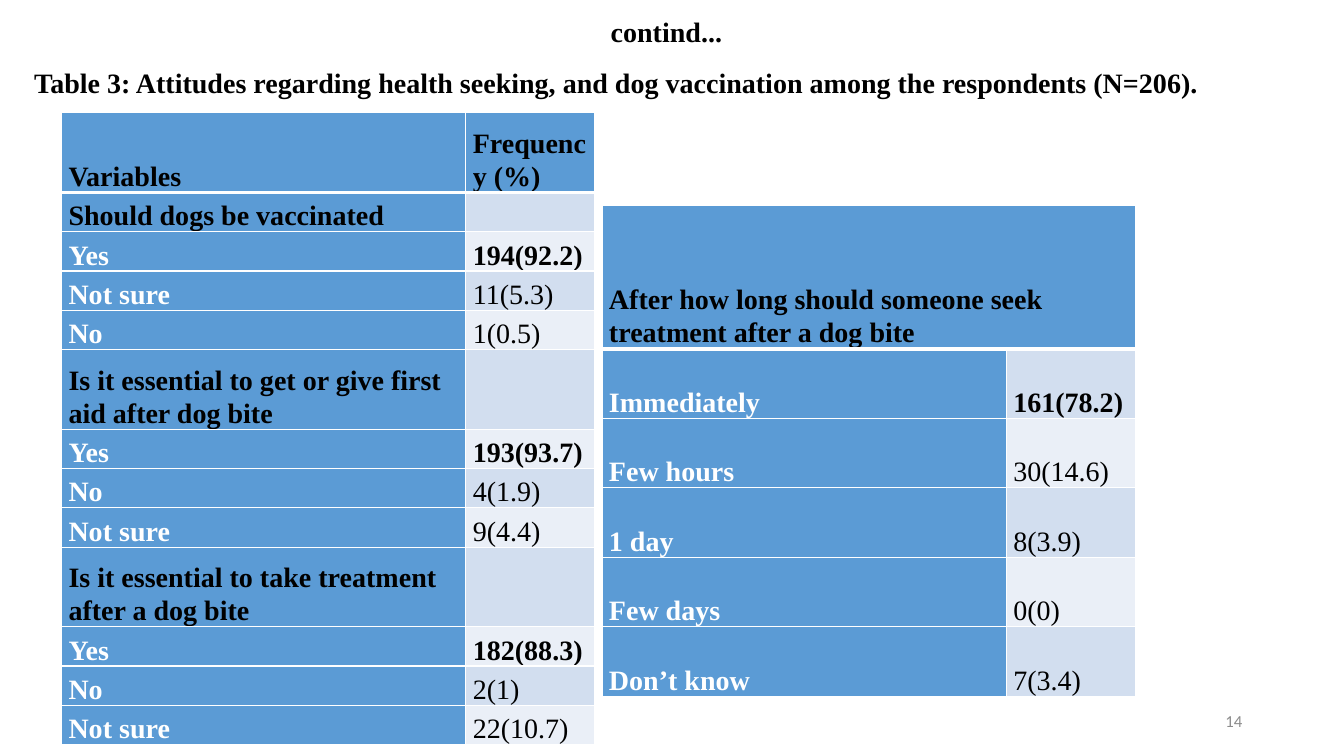
"""Build the slide on attitudes to health seeking and dog vaccination."""
from lxml import etree
from pptx import Presentation
from pptx import util as u
from pptx.dml.color import RGBColor
from pptx.enum import text
from pptx.oxml import ns

ANSWERS = [
    ("Variables", "Frequency (%)"),
    ("Should dogs be vaccinated", ""),
    ("Yes", "194(92.2)"),
    ("Not sure", "11(5.3)"),
    ("No", "1(0.5)"),
    ("Is it essential to get or give first aid after dog bite", ""),
    ("Yes", "193(93.7)"),
    ("No", "4(1.9)"),
    ("Not sure", "9(4.4)"),
    ("Is it essential to take treatment after a dog bite", ""),
    ("Yes", "182(88.3)"),
    ("No", "2(1)"),
    ("Not sure", "22(10.7)"),
]
DELAYS = [
    ("After how long should someone seek treatment after a dog bite", ""),
    ("Immediately", "161(78.2)"),
    ("Few hours", "30(14.6)"),
    ("1 day", "8(3.9)"),
    ("Few days", "0(0)"),
    ("Don’t know", "7(3.4)"),
]


def color(value):
    return RGBColor.from_string(value)


def write(frame, words, font="Times New Roman", size=20, ink="000000",
          bold=True, align=text.PP_ALIGN.LEFT, spacing=1.0):
    para = frame.paragraphs[0]
    para.alignment = align
    para.line_spacing = spacing
    span = para.add_run()
    span.text = words
    span.font.name = font
    span.font.size = u.Pt(size)
    span.font.bold = bold
    span.font.color.rgb = color(ink)


class SlideBuilder:
    """Hold the table style and the current page."""

    accent = "5B9BD5"
    bands = ("EAEFF7", "D2DEEF")
    rule = "FFFFFF"
    columns = (4.01, 1.28)

    def __init__(self, page):
        self.page = page

    def label(self, words, left, top, width, height,
              anchor=text.MSO_ANCHOR.MIDDLE, **style):
        box = self.page.shapes.add_textbox(*map(u.Inches, (left, top, width, height)))
        frame = box.text_frame
        frame.word_wrap = True
        frame.vertical_anchor = anchor
        write(frame, words, **style)

    def borders(self, cell, row):
        properties = cell._tc.get_or_add_tcPr()
        widths = {"lnL": 1, "lnR": 1, "lnT": 3 if row == 1 else 1, "lnB": 3 if row == 0 else 1}
        for side, width in widths.items():
            line = etree.SubElement(properties, ns.qn(f"a:{side}"), w=str(u.Pt(width)))
            fill = etree.SubElement(line, ns.qn("a:solidFill"))
            etree.SubElement(fill, ns.qn("a:srgbClr"), val=self.rule)

    def cell(self, cell, words, row, fill, **style):
        self.borders(cell, row)
        cell.fill.solid()
        cell.fill.fore_color.rgb = color(fill)
        cell.margin_left = cell.margin_right = u.Inches(0.07)
        cell.margin_top = cell.margin_bottom = 0
        cell.vertical_anchor = text.MSO_ANCHOR.BOTTOM
        if words:
            write(cell.text_frame, words, spacing=1.07, **style)

    def table(self, records, left, top, heights):
        frame = self.page.shapes.add_table(
            len(records), 2, u.Inches(left), u.Inches(top),
            u.Inches(sum(self.columns)), u.Inches(sum(heights)))
        table = frame.table
        for column, width in zip(table.columns, self.columns):
            column.width = u.Inches(width)
        after_question = False
        for row, (name, value) in enumerate(records):
            table.rows[row].height = u.Inches(heights[row])
            heading = row == 0 or not value
            self.cell(table.cell(row, 0), name, row, self.accent,
                      ink="000000" if heading else "FFFFFF")
            self.cell(table.cell(row, 1), value, row,
                      self.accent if row == 0 else self.bands[row % 2],
                      bold=heading or after_question)
            after_question = not value
        if not records[0][1]:
            table.cell(0, 0).merge(table.cell(0, 1))


def main():
    deck = Presentation()
    deck.slide_width, deck.slide_height = u.Inches(13.33), u.Inches(7.5)
    slide = SlideBuilder(deck.slides.add_slide(deck.slide_layouts[6]))
    slide.label("contind...", 0.92, 0.07, 11.38, 0.53,
                align=text.PP_ALIGN.CENTER, spacing=0.9)
    slide.table(ANSWERS, 0.61, 1.12,
                [0.79 if row in (0, 5, 9) else 0.39 for row in range(len(ANSWERS))])
    slide.label("Table 3: Attitudes regarding health seeking, and dog vaccination "
                "among the respondents (N=206).", 0.24, 0.6, 12.19, 0.44,
                anchor=text.MSO_ANCHOR.TOP)
    slide.table(DELAYS, 5.97, 2.04, [1.42] + [0.69] * 5)
    slide.label("14", 9.42, 6.95, 3, 0.4, font="Calibri", size=12,
                ink="8C8C8C", bold=False, align=text.PP_ALIGN.RIGHT)
    deck.save("out.pptx")


if __name__ == "__main__":
    main()
